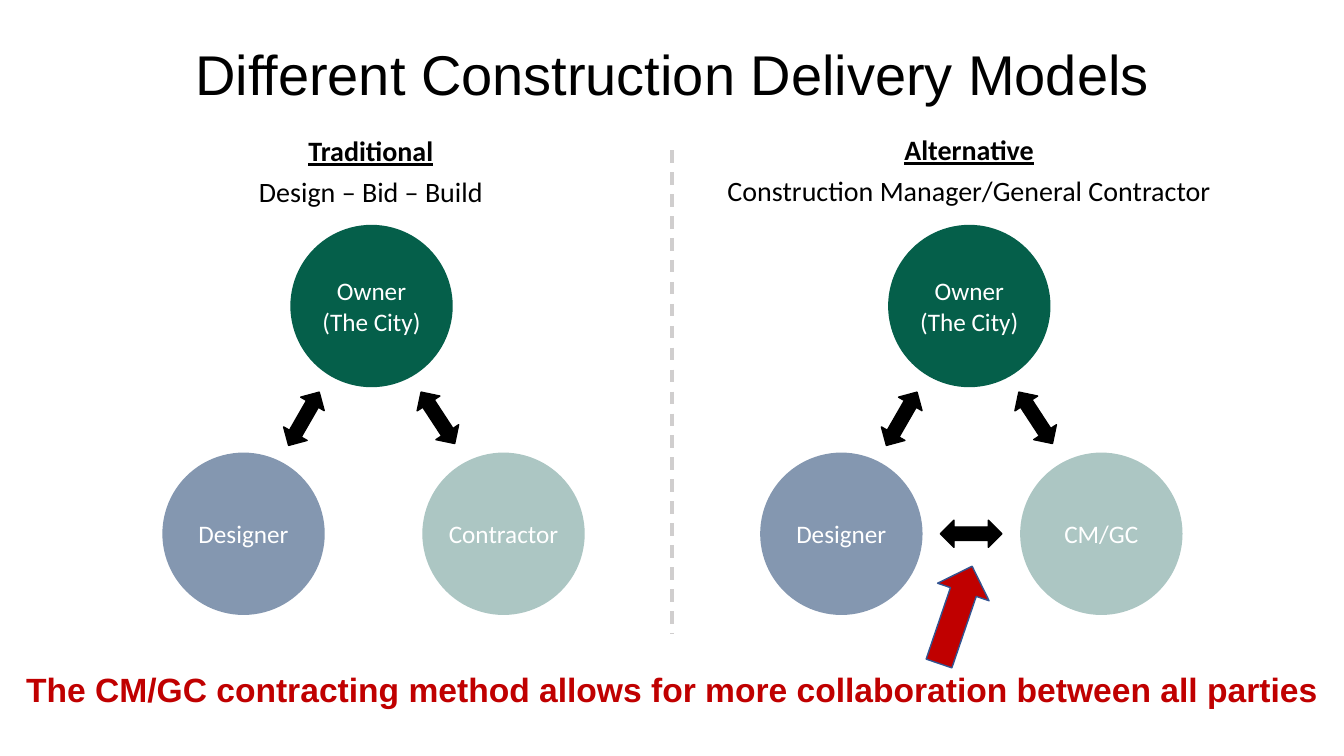
"""Build a slide comparing two construction delivery models."""
from dataclasses import dataclass

import pptx
import pptx.dml.color
import pptx.enum.dml
import pptx.enum.shapes
import pptx.enum.text
import pptx.oxml
import pptx.shapes.autoshape
import pptx.slide
import pptx.util

RGBColor = pptx.dml.color.RGBColor
Pt = pptx.util.Pt
Shapes = pptx.enum.shapes.MSO_SHAPE
Anchor = pptx.enum.text.MSO_ANCHOR

BLACK = RGBColor(0x00, 0x00, 0x00)
WHITE = RGBColor(0xFF, 0xFF, 0xFF)
GREEN = RGBColor(0x05, 0x5F, 0x4A)
SLATE = RGBColor(0x84, 0x97, 0xB0)
SAGE = RGBColor(0xAC, 0xC6, 0xC3)
RED = RGBColor(0xC0, 0x00, 0x00)
BLUE = RGBColor(0x32, 0x54, 0x91)
GREY = RGBColor(0xD0, 0xCE, 0xCE)

SLIDE_WIDTH, SLIDE_HEIGHT = 960, 540
CIRCLE_SIZE = 116
BANNER_HEIGHT = 80.6


@dataclass
class Box:
    left: float
    top: float
    width: float
    height: float

    def lengths(self) -> list[pptx.util.Length]:
        return [Pt(value) for value in (self.left, self.top, self.width, self.height)]


@dataclass
class TextStyle:
    font: str
    size: float
    color: RGBColor
    bold: bool = False
    line_spacing: float = 1.0


@dataclass
class Party:
    left: float
    top: float
    color: RGBColor


@dataclass
class Arrow:
    left: float
    top: float
    rotation: float


@dataclass
class Model:
    offset: float
    name: str
    method: str
    heading: Box
    builder: str
    arrows: list[Arrow]


TITLE = TextStyle("Arial", 40, BLACK, line_spacing=0.9)
CAPTION = TextStyle("Arial", 24, RED, bold=True, line_spacing=0.9)
HEADING = TextStyle("Calibri", 20, BLACK, line_spacing=1.2)
LABEL = TextStyle("Calibri", 18, WHITE)

DESIGNER = Party(116, 323.3, SLATE)
BUILDER = Party(301.7, 323.3, SAGE)
OWNER = Party(207.4, 160.6, GREEN)

OWNER_ARROWS = [Arrow(207.4, 277.2, 29.9), Arrow(303.1, 276.5, 326.8)]
COLLABORATION_ARROW = Arrow(257, 359.3, 270)

MODELS = [
    Model(0, "Traditional", "Design – Bid – Build",
          Box(130.3, 109.4, 269.3, 42.5), "Contractor", OWNER_ARROWS),
    Model(427, "Alternative", "Construction Manager/General Contractor",
          Box(509, 108.7, 366.5, 42.5), "CM/GC", OWNER_ARROWS + [COLLABORATION_ARROW]),
]


def write_lines(shape: pptx.shapes.autoshape.Shape, lines: list[str],
                style: TextStyle, anchor: Anchor) -> None:
    frame = shape.text_frame
    frame.word_wrap = True
    frame.vertical_anchor = anchor
    frame.text = "\n".join(lines)
    for paragraph in frame.paragraphs:
        paragraph.alignment = pptx.enum.text.PP_ALIGN.CENTER
        paragraph.line_spacing = style.line_spacing
        paragraph.font.name = style.font
        paragraph.font.size = Pt(style.size)
        paragraph.font.bold = style.bold
        paragraph.font.color.rgb = style.color


def add_text(slide: pptx.slide.Slide, box: Box, lines: list[str],
             style: TextStyle) -> pptx.shapes.autoshape.Shape:
    shape = slide.shapes.add_textbox(*box.lengths())
    write_lines(shape, lines, style, Anchor.BOTTOM)
    return shape


def add_filled(slide: pptx.slide.Slide, kind: Shapes, box: Box, fill: RGBColor,
               outline: RGBColor | None = None,
               rotation: float = 0) -> pptx.shapes.autoshape.Shape:
    shape = slide.shapes.add_shape(kind, *box.lengths())
    shape.shadow.inherit = False
    shape.rotation = rotation
    shape.fill.solid()
    shape.fill.fore_color.rgb = fill
    if outline is None:
        shape.line.fill.background()
    else:
        shape.line.color.rgb = outline
        shape.line.width = Pt(1)
    return shape


def add_party(slide: pptx.slide.Slide, party: Party, offset: float,
              lines: list[str]) -> None:
    box = Box(party.left + offset, party.top, CIRCLE_SIZE, CIRCLE_SIZE)
    circle = add_filled(slide, Shapes.OVAL, box, party.color)
    frame = circle.text_frame
    frame.margin_left = frame.margin_right = Pt(0)
    write_lines(circle, lines, LABEL, Anchor.MIDDLE)


def add_model(slide: pptx.slide.Slide, model: Model) -> None:
    heading = add_text(slide, model.heading, [model.name, model.method], HEADING)
    name_font = heading.text_frame.paragraphs[0].font
    name_font.bold = name_font.underline = True
    add_party(slide, DESIGNER, model.offset, ["Designer"])
    add_party(slide, BUILDER, model.offset, [model.builder])
    add_party(slide, OWNER, model.offset, ["Owner", "(The City)"])
    for arrow in model.arrows:
        box = Box(arrow.left + model.offset, arrow.top, 19.4, 43.9)
        add_filled(slide, Shapes.UP_DOWN_ARROW, box, BLACK, BLACK, arrow.rotation)


def add_divider(slide: pptx.slide.Slide) -> None:
    middle = Pt(SLIDE_WIDTH / 2)
    divider = slide.shapes.add_connector(
        pptx.enum.shapes.MSO_CONNECTOR.STRAIGHT, middle, Pt(107.3), middle, Pt(452.9))
    divider.line.color.rgb = GREY
    divider.line.width = Pt(2.25)
    divider.line.dash_style = pptx.enum.dml.MSO_LINE.DASH
    properties = divider._element.spPr
    properties.append(pptx.oxml.parse_xml(
        '<a:effectLst xmlns:a="http://schemas.openxmlformats.org/drawingml/2006/main"/>'))


def main() -> None:
    presentation = pptx.Presentation()
    presentation.slide_width = Pt(SLIDE_WIDTH)
    presentation.slide_height = Pt(SLIDE_HEIGHT)
    slide = presentation.slides.add_slide(presentation.slide_layouts[6])
    add_text(slide, Box(0, 0, SLIDE_WIDTH, BANNER_HEIGHT),
             ["Different Construction Delivery Models"], TITLE)
    for model in MODELS:
        add_model(slide, model)
    add_divider(slide)
    add_text(slide, Box(0, 429.8, SLIDE_WIDTH, BANNER_HEIGHT),
             ["The CM/GC contracting method allows for more collaboration between all parties"],
             CAPTION)
    add_filled(slide, Shapes.UP_ARROW, Box(663.1, 402.5, 38.9, 73.4), RED, BLUE, 18.8)
    presentation.save("out.pptx")


if __name__ == "__main__":
    main()
